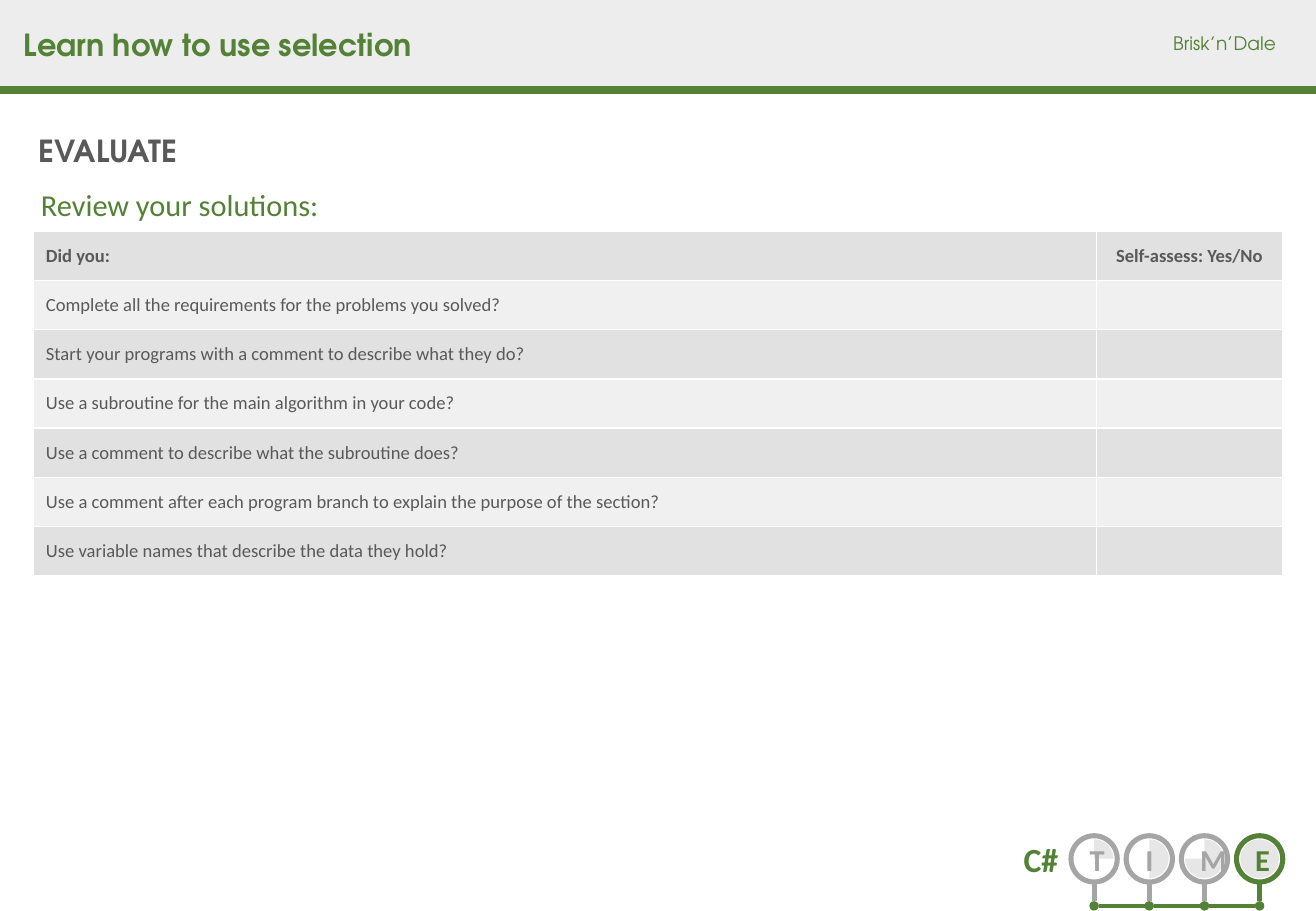
from lxml import etree
from pptx import Presentation
from pptx import util as u
from pptx.dml import color
from pptx.enum import shapes, text
from pptx.oxml import ns

GREEN, GREY, DARK, PALE = "538135", "A5A5A5", "595959", "E7E6E6"
HEADING = "TeX Gyre Adventor"
BODY = "Calibri"
OVAL = shapes.MSO_SHAPE.OVAL
PIE = shapes.MSO_SHAPE.PIE
CENTER = text.PP_ALIGN.CENTER
MIDDLE = text.MSO_ANCHOR.MIDDLE
QUESTIONS = [
    "Complete all the requirements for the problems you solved?",
    "Start your programs with a comment to describe what they do?",
    "Use a subroutine for the main algorithm in your code?",
    "Use a comment to describe what the subroutine does?",
    "Use a comment after each program branch to explain the purpose of the section?",
    "Use variable names that describe the data they hold?",
]


def rgb(value):
    """Turn a hex string into a colour."""
    return color.RGBColor.from_string(value)


def assign(target, values):
    """Set each named attribute on the target."""
    for name, value in values.items():
        setattr(target, name, value)


class SlideBuilder:
    """Draw styled elements on the current page, in points."""

    def __init__(self, page):
        """Keep the page to draw on."""
        self.page = page

    def wording(self, frame, words, size, ink, font=BODY, bold=False, **layout):
        """Put one formatted line into a text frame."""
        para = frame.paragraphs[0]
        assign(para, layout)
        span = para.add_run()
        span.text = words
        assign(span.font, {"size": u.Pt(size), "name": font, "bold": bold})
        span.font.color.rgb = rgb(ink)

    def label(self, place, words, size, ink, font=BODY, bold=False,
              frame=None, **layout):
        """Add a text box."""
        box = self.page.shapes.add_textbox(*map(u.Pt, place))
        fit = text.MSO_AUTO_SIZE.SHAPE_TO_FIT_TEXT
        assign(box.text_frame, {"word_wrap": False, "auto_size": fit, **(frame or {})})
        self.wording(box.text_frame, words, size, ink, font, bold, **layout)

    def shape(self, kind, place, fill=None, line=None, angles=()):
        """Add a preset shape with a plain fill or outline."""
        box = self.page.shapes.add_shape(kind, *map(u.Pt, place))
        box.shadow.inherit = False
        if fill:
            box.fill.solid()
            box.fill.fore_color.rgb = rgb(fill)
        else:
            box.fill.background()
        if line:
            box.line.color.rgb = rgb(line)
            box.line.width = u.Pt(3)
        else:
            box.line.fill.background()
        for index, angle in enumerate(angles):
            box.adjustments[index] = angle * 0.6
        return box

    def line(self, ends, ink, width):
        """Add a straight line."""
        straight = shapes.MSO_CONNECTOR.STRAIGHT
        link = self.page.shapes.add_connector(straight, *map(u.Pt, ends))
        link.line.color.rgb = rgb(ink)
        link.line.width = u.Pt(width)
        etree.SubElement(link._element.spPr, ns.qn("a:effectLst"))

    def border(self, cell):
        """Give a cell white borders."""
        props = cell._tc.get_or_add_tcPr()
        for index, side in enumerate(("lnL", "lnR", "lnT", "lnB")):
            edge = etree.Element(ns.qn("a:" + side), w=str(u.Pt(1)))
            fill = etree.SubElement(edge, ns.qn("a:solidFill"))
            etree.SubElement(fill, ns.qn("a:srgbClr"), val="FFFFFF")
            props.insert(index, edge)

    def table(self, place, widths, rows):
        """Add the checklist table."""
        frame = self.page.shapes.add_table(len(rows), len(widths), *map(u.Pt, place))
        grid = frame.table
        assign(grid, {"first_row": False, "horz_banding": False})
        for column, width in zip(grid.columns, widths):
            column.width = u.Pt(width)
        for r, row in enumerate(rows):
            for c, words in enumerate(row):
                cell = grid.cell(r, c)
                cell.vertical_anchor = MIDDLE
                cell.fill.solid()
                cell.fill.fore_color.rgb = rgb("F0F0F0" if r % 2 else "E1E1E1")
                self.border(cell)
                if words:
                    align = CENTER if c else text.PP_ALIGN.LEFT
                    self.wording(cell.text_frame, words, 11, DARK, bold=r == 0,
                                 alignment=align)

    def stage(self, letter, x, ink, angles):
        """Add one lettered ring with its progress slice, stem and dot."""
        kind = PIE if angles else OVAL
        self.shape(kind, (x - 11.5, 497.5, 23, 23), PALE, angles=angles)
        ring = self.shape(OVAL, (x - 13.7, 495.4, 27.4, 27.4), line=ink)
        ring.text_frame.vertical_anchor = MIDDLE
        self.wording(ring.text_frame, letter, 18, ink, bold=True, alignment=CENTER)
        self.line((x, 522.8, x, 534.2), ink, 3)
        self.shape(OVAL, (x - 2.8, 534.2, 5.6, 5.6), GREEN)


def main():
    """Build the slide and save it."""
    deck = Presentation()
    assign(deck, {"slide_width": u.Pt(780), "slide_height": u.Pt(540)})
    draw = SlideBuilder(deck.slides.add_slide(deck.slide_layouts[6]))

    draw.shape(shapes.MSO_SHAPE.RECTANGLE, (0, 0, 780, 53.3), "EDEDED")
    draw.line((0, 53.3, 780, 53.3), GREEN, 4.5)
    draw.label((7, 11.7, 247, 29), "Learn how to use selection", 18, GREEN, HEADING, True)
    draw.label((688.3, 15.3, 88, 21), "Brisk’n’Dale", 11, GREEN, HEADING)
    draw.label((16, 75, 100, 29), "EVALUATE", 18, DARK, HEADING, True)

    draw.label((545.8, 493.2, 88.5, 31.5), "C#", 20, GREEN, bold=True,
               frame={"word_wrap": True, "vertical_anchor": text.MSO_ANCHOR.BOTTOM},
               alignment=text.PP_ALIGN.RIGHT)
    start, step = 648.5, 32.7
    slices = [(270, 0), (270, 90), (270, 180), ()]
    for index, (letter, angles) in enumerate(zip("TIME", slices)):
        draw.stage(letter, start + index * step, GREY if angles else GREEN, angles)
    for index in range(3):
        x = start + index * step
        draw.line((x + 2.8, 537, x + step - 2.8, 537), GREEN, 2.25)

    draw.label((17.2, 109.3, 743, 25.5), "Review your solutions:", 18, GREEN,
               frame={"word_wrap": True, "auto_size": text.MSO_AUTO_SIZE.NONE},
               line_spacing=0.9)
    rows = [("Did you:", "Self-assess: Yes/No")] + [(words, "") for words in QUESTIONS]
    draw.table((20, 137, 740, 204.4), (630, 110), rows)
    deck.save("out.pptx")


if __name__ == "__main__":
    main()
